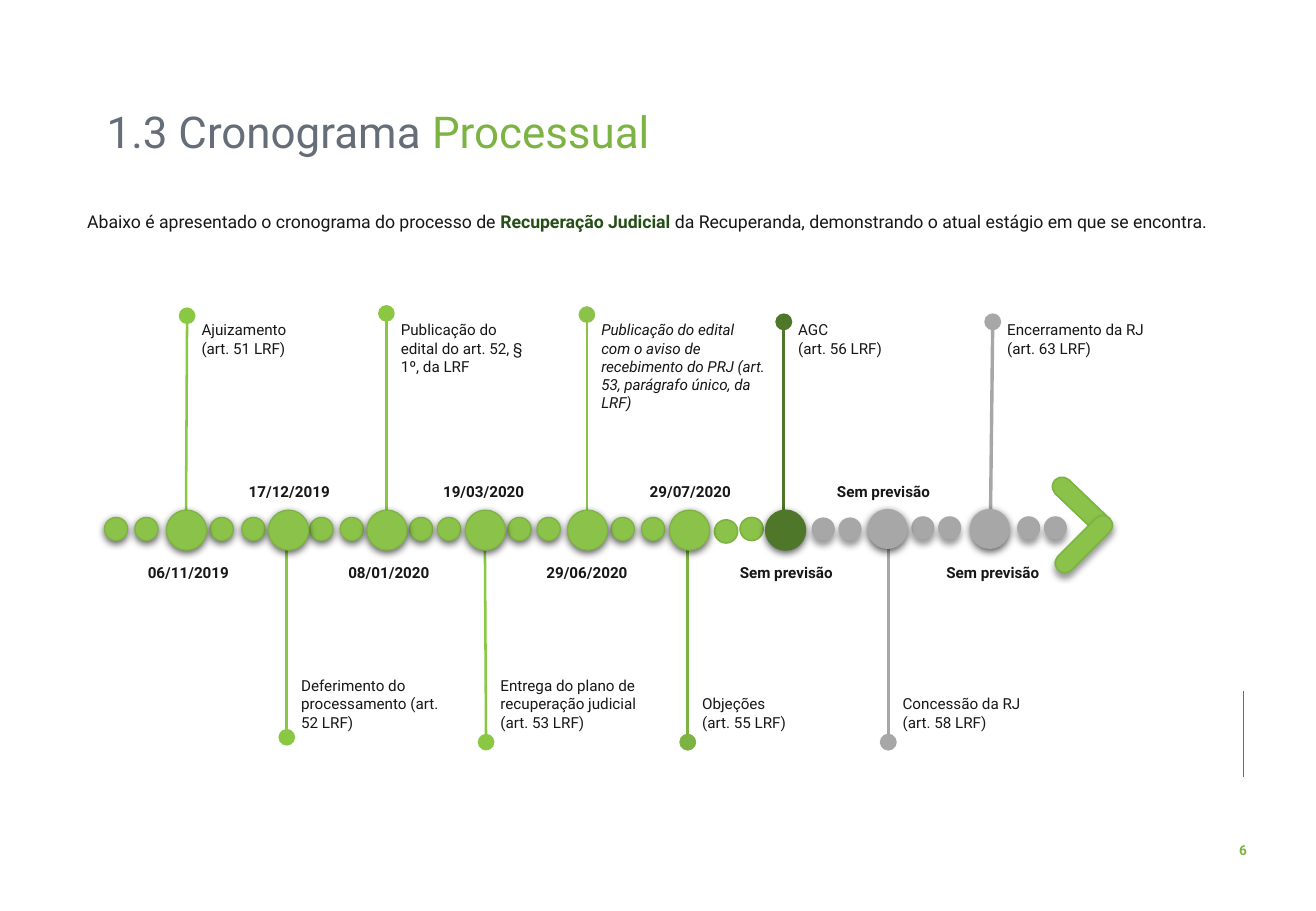
from lxml import etree
from pptx import Presentation
from pptx.dml.color import RGBColor
from pptx.enum.shapes import MSO_CONNECTOR, MSO_SHAPE
from pptx.enum.text import MSO_ANCHOR, PP_ALIGN
from pptx.oxml.ns import qn
from pptx.util import Inches, Pt

STRAIGHT = MSO_CONNECTOR.STRAIGHT
OVAL, PILL = MSO_SHAPE.OVAL, MSO_SHAPE.ROUNDED_RECTANGLE
TOP, MIDDLE, BOTTOM = MSO_ANCHOR.TOP, MSO_ANCHOR.MIDDLE, MSO_ANCHOR.BOTTOM
LEFT, CENTER, JUSTIFY = PP_ALIGN.LEFT, PP_ALIGN.CENTER, PP_ALIGN.JUSTIFY

COLORS = {
    "slate": "656D78", "ink": "181717", "forest": "264F17", "accent": "7CB342",
    "leaf": "8BC34A", "lime": "8AC843", "moss": "4E772A", "gray": "A7A7A7",
}
SOFT = {"alpha": 63, "blur": 4.5, "dist": 1.5}
DEEP = {"alpha": 40, "blur": 4, "dist": 3}

deck = Presentation()
deck.slide_width, deck.slide_height = Inches(10.83), Inches(7.5)
page = deck.slides.add_slide(deck.slide_layouts[6])


def add_text(at, lines, align=LEFT, anchor=TOP, wrap=True):
    box = page.shapes.add_textbox(*(Inches(value) for value in at))
    frame = box.text_frame
    frame.word_wrap, frame.vertical_anchor = wrap, anchor
    for number, spans in enumerate(lines):
        para = frame.paragraphs[0] if number == 0 else frame.add_paragraph()
        para.alignment = align
        for text, color, formats in spans:
            span = para.add_run()
            span.text = text
            span.font.name = "Roboto"
            span.font.color.rgb = RGBColor.from_string(COLORS[color])
            for name, value in formats.items():
                setattr(span.font, name, value)
    return frame.paragraphs[0]


def add_bead(kind, at, fill, line=None, width=0.75, shadow=None):
    bead = page.shapes.add_shape(kind, *(Inches(value) for value in at))
    bead.shadow.inherit = False
    bead.fill.solid()
    bead.fill.fore_color.rgb = RGBColor.from_string(COLORS[fill])
    if line:
        bead.line.color.rgb = RGBColor.from_string(COLORS[line])
        bead.line.width = Pt(width)
    else:
        bead.line.fill.background()
    if shadow:
        effects = bead._element.spPr.find(qn("a:effectLst"))
        outer = etree.SubElement(
            effects, qn("a:outerShdw"), blurRad=str(Pt(shadow["blur"])),
            dist=str(Pt(shadow["dist"])), dir="5400000", algn="ctr", rotWithShape="0")
        black = etree.SubElement(outer, qn("a:srgbClr"), val="000000")
        etree.SubElement(black, qn("a:alpha"), val=str(shadow["alpha"] * 1000))
    return bead


title = add_text((0.78, 0.86, 8.18, 0.53), [[
    ("1.3 Cronograma ", "slate", {"size": Pt(26)}),
    ("Processual", "accent", {"size": Pt(26)}),
]])
title.line_spacing = 0.9

plain = {"size": Pt(10.5)}
intro = add_text((0.31, 1.66, 10.17, 0.3), [[
    ("Abaixo é apresentado o cronograma do processo de ", "ink", plain),
    ("Recuperação Judicial ", "forest", {**plain, "bold": True}),
    ("da Recuperanda, demonstrando o atual estágio em que se encontra.", "ink", plain),
]], JUSTIFY)
intro.line_spacing = 1.14
intro._p.get_or_add_pPr().set("indent", str(Inches(0.31)))

add_text((10.06, 6.88, 0.34, 0.24),
         [[("6", "accent", {"size": Pt(8.1), "bold": True})]], CENTER, wrap=False)

milestones = [
    ("Ajuizamento (art. 51 LRF)", 1.11, "06/11/2019", 1.55, 1.53, 1.54, 2.6, "lime", 1.5),
    ("Deferimento do processamento (art. 52 LRF)", 1.37, "17/12/2019", 2.38,
     2.36, 2.36, 6.07, "lime", 1.5),
    ("Publicação do edital do art. 52, § 1º, da LRF", 1.3, "08/01/2020", 3.2,
     3.18, 3.18, 2.58, "lime", 1.5),
    ("Entrega do plano de recuperação judicial (art. 53 LRF)", 1.4, "19/03/2020", 3.98,
     3.99, 4, 6.11, "lime", 1.5),
    ("Publicação do edital com o aviso de recebimento do PRJ (art. 53, parágrafo único, da LRF)",
     1.56, "29/06/2020", 4.83, 4.83, 4.83, 2.59, "leaf", 1.5),
    ("Objeções\n(art. 55 LRF)", 1.1, "29/07/2020", 5.68, 5.66, 5.66, 6.11, "accent", 2),
    ("AGC\n(art. 56 LRF)", 1.1, "Sem previsão", 6.47, 6.45, 6.45, 2.65, "moss", 2),
    ("Concessão da RJ\n(art. 58 LRF)", 1.33, "Sem previsão", 7.27, 7.31, 7.31, 6.11, "gray", 2),
    ("Encerramento da RJ\n(art. 63 LRF)", 1.58, "Sem previsão", 8.17,
     8.15, 8.17, 2.65, "gray", 2),
]
stems = [(base, 4.36, tip, end, color, width, True)
         for *_, base, tip, end, color, width in milestones]
for x1, y1, x2, y2, color, width, dotted in stems + [
        (10.23, 5.69, 10.23, 6.4, "slate", 0.5, False)]:
    stem = page.shapes.add_connector(
        STRAIGHT, Inches(x1), Inches(y1), Inches(x2), Inches(y2))
    stem.line.color.rgb = RGBColor.from_string(COLORS[color])
    stem.line.width = Pt(width)
    if dotted:
        etree.SubElement(stem.line._get_or_add_ln(), qn("a:tailEnd"),
                         type="oval", w="lg", len="lg")
    etree.SubElement(stem._element.spPr, qn("a:effectLst"))

for index, (label, label_width, date, date_center, _, tip, *_) in enumerate(milestones):
    above = index % 2 == 0
    style = {"size": Pt(9), "italic": "aviso" in label}
    add_text((tip + 0.02, 2.59 if above else 5.51, label_width, 0.56),
             [[(line, "ink", style)] for line in label.split("\n")],
             anchor=TOP if above else BOTTOM)
    add_text((date_center - 0.6, 4.59 if above else 3.92, 1.2, 0.25),
             [[(date, "ink", {"size": Pt(9), "bold": True})]], CENTER, MIDDLE)

for left in (0.86, 1.11, 1.73, 1.99, 2.55, 2.8, 3.37, 3.6, 4.18, 4.42, 5.03, 5.28):
    add_bead(OVAL, (left, 4.26, 0.19, 0.19), "leaf", "accent", shadow=SOFT)
for left, top in ((5.88, 4.28), (6.09, 4.26)):
    add_bead(OVAL, (left, top, 0.19, 0.19), "leaf", "accent", 1)
for left in (6.68, 6.9, 7.5, 7.72, 8.37, 8.59):
    add_bead(OVAL, (left, 4.26 if left < 7 else 4.25, 0.19, 0.19), "gray", shadow=DEEP)

for left, top, angle, shadow in ((8.6, 4.08, 43.7, None), (8.62, 4.4, 315, DEEP)):
    arm = add_bead(PILL, (left, top, 0.6, 0.16), "leaf", "accent", 1, shadow)
    arm.adjustments[0] = 0.5
    arm.rotation = angle

for left in (1.37, 2.21, 3.02, 3.83, 4.67, 5.51):
    add_bead(OVAL, (left, 4.2, 0.33, 0.33), "leaf", "accent", shadow=SOFT)
add_bead(OVAL, (6.3, 4.2, 0.33, 0.33), "moss", "moss", shadow=SOFT)
for left in (7.14, 7.98):
    add_bead(OVAL, (left, 4.19, 0.33, 0.33), "gray", shadow=SOFT)

deck.save("out.pptx")
